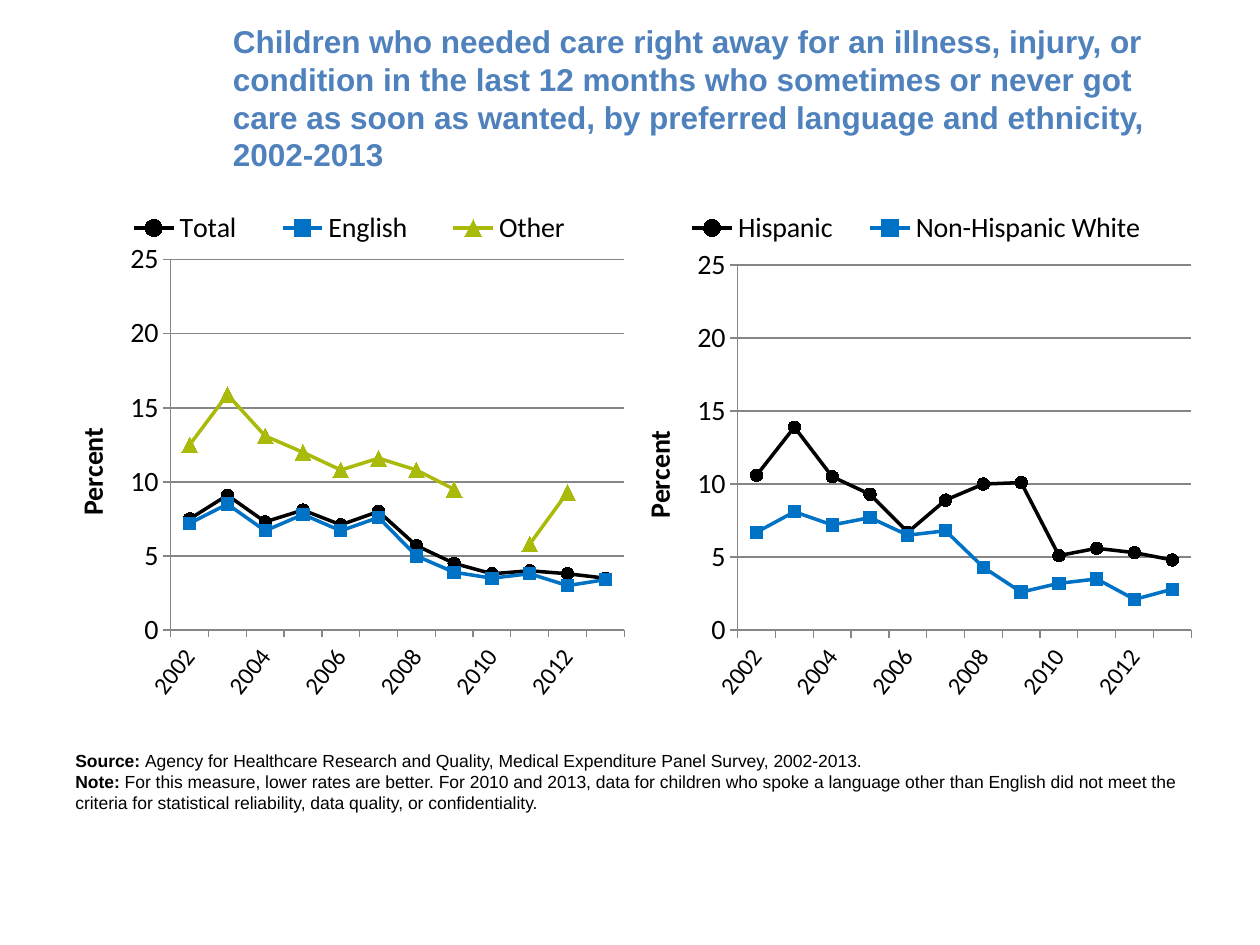
from pptx import Presentation
from pptx.chart.data import CategoryChartData
from pptx.dml.color import RGBColor
from pptx.enum.chart import XL_CHART_TYPE, XL_LEGEND_POSITION, XL_MARKER_STYLE, XL_TICK_MARK
from pptx.enum.text import MSO_ANCHOR
from pptx.oxml import parse_xml
from pptx.oxml.ns import nsdecls, qn
from pptx.util import Pt

PX = 9144  # 100 px to the inch
LINE_MARKERS = XL_CHART_TYPE.LINE_MARKERS
TOP = XL_LEGEND_POSITION.TOP
OUTSIDE = XL_TICK_MARK.OUTSIDE
CIRCLE, SQUARE, TRIANGLE = (XL_MARKER_STYLE.CIRCLE, XL_MARKER_STYLE.SQUARE,
                            XL_MARKER_STYLE.TRIANGLE)
BLACK, GRAY = "000000", "868686"


def rgb(value):
    return RGBColor.from_string(value)


def make_layout(x, y, w, h, target=""):
    parts = "".join(f'<c:{tag} val="{val}"/>' for tag, val in
                    (("xMode", "edge"), ("yMode", "edge"),
                     ("x", x), ("y", y), ("w", w), ("h", h)))
    return parse_xml(f'<c:layout {nsdecls("c")}><c:manualLayout>{target}{parts}'
                     '</c:manualLayout></c:layout>')


prs = Presentation()
prs.slide_width, prs.slide_height = 1000 * PX, 750 * PX
s = prs.slides.add_slide(prs.slide_layouts[6])

# Title
sp = s.shapes.add_textbox(175 * PX, 30 * PX, 775 * PX, 95 * PX)
tf = sp.text_frame
tf.word_wrap = True
tf.vertical_anchor = MSO_ANCHOR.MIDDLE
tf.text = ("Children who needed care right away for an illness, injury, or condition "
           "in the last 12 months who sometimes or never got care as soon as wanted, "
           "by preferred language and ethnicity, 2002-2013")
font = tf.paragraphs[0].runs[0].font
font.name, font.size, font.bold = "Arial", Pt(18), True
font.color.rgb = rgb("4F81BD")

# Line charts: by language and by ethnicity
years = [str(year) for year in range(2002, 2014)]
styles = [(BLACK, CIRCLE, 7), ("0072C6", SQUARE, 7), ("AABA0A", TRIANGLE, 9)]
language = {
    "Total": [7.5, 9.1, 7.3, 8.1, 7.1, 8, 5.7, 4.5, 3.8, 4, 3.8, 3.5],
    "English": [7.2, 8.5, 6.7, 7.8, 6.7, 7.6, 5, 3.9, 3.5, 3.8, 3, 3.4],
    "Other": [12.5, 15.9, 13.1, 12, 10.8, 11.6, 10.8, 9.5, None, 5.8, 9.3, None],
}
ethnicity = {
    "Hispanic": [10.6, 13.9, 10.5, 9.3, 6.7, 8.9, 10, 10.1, 5.1, 5.6, 5.3, 4.8],
    "Non-Hispanic White": [6.7, 8.1, 7.2, 7.7, 6.5, 6.8, 4.3, 2.6, 3.2, 3.5, 2.1, 2.8],
}
for left, rates, plot_top in ((50, language, 0.11), (500, ethnicity, 0.12)):
    data = CategoryChartData(number_format="0.0")
    data.categories = years
    for name, values in rates.items():
        data.add_series(name, values)
    chart = s.shapes.add_chart(LINE_MARKERS, left * PX, 160 * PX,
                               450 * PX, 420 * PX, data).chart
    chart.has_title = False
    chart.font.name, chart.font.size = "Calibri", Pt(16)
    chart.font.color.rgb = rgb(BLACK)

    # Series
    chart.plots[0].vary_by_categories = False
    for series, (color, marker, size) in zip(chart.plots[0].series, styles):
        series.smooth = False
        series.format.line.width = Pt(2)
        series.format.line.color.rgb = rgb(color)
        series.marker.style, series.marker.size = marker, size
        series.marker.format.fill.solid()
        series.marker.format.fill.fore_color.rgb = rgb(color)
        series.marker.format.line.color.rgb = rgb(color)

    # Axes
    cat, val = chart.category_axis, chart.value_axis
    for axis, size in ((cat, 14), (val, 16)):
        axis.major_tick_mark = OUTSIDE
        axis.format.line.color.rgb = rgb(GRAY)
        axis.tick_labels.font.size = Pt(size)
        axis.tick_labels.font.name = "Calibri"
    val.minimum_scale, val.maximum_scale, val.major_unit = 0, 25, 5
    val.tick_labels.number_format = "0"
    val.tick_labels.number_format_is_linked = False
    val.major_gridlines.format.line.color.rgb = rgb(GRAY)
    tf = val.axis_title.text_frame
    tf.text = "Percent"
    font = tf.paragraphs[0].runs[0].font
    font.name, font.size, font.bold = "Calibri", Pt(16), True

    # Slanted labels on every second year
    cat_xml = cat._element
    cat_xml.find(qn("c:txPr")).find(qn("a:bodyPr")).set("rot", "-3120000")
    last = cat_xml.find(qn("c:noMultiLvlLbl"))
    for tag, step in (("tickLblSkip", 2), ("tickMarkSkip", 1)):
        last.addprevious(parse_xml(f'<c:{tag} {nsdecls("c")} val="{step}"/>'))

    # Legend and plot positions
    chart.has_legend = True
    legend = chart.legend
    legend.position = TOP
    legend.include_in_layout = False
    legend.font.name, legend.font.size = "Calibri", Pt(16)
    legend_xml = legend._element
    plot_xml = cat_xml.getparent()
    for parent in (legend_xml, plot_xml):
        for old in parent.findall(qn("c:layout")):
            parent.remove(old)
    legend_xml.find(qn("c:legendPos")).addnext(make_layout(0.06, 0.01, 0.89, 0.08))
    plot_xml.insert(0, make_layout(0.19, plot_top, 0.8, 0.81 - plot_top,
                                   '<c:layoutTarget val="inner"/>'))

# Source and note
sp = s.shapes.add_textbox(50 * PX, 590 * PX, 900 * PX, 61 * PX)
tf = sp.text_frame
tf.word_wrap = True
notes = [
    ("Source: ", "Agency for Healthcare Research and Quality, Medical Expenditure "
                 "Panel Survey, 2002-2013."),
    ("Note: ", "For this measure, lower rates are better. For 2010 and 2013, data for "
               "children who spoke a language other than English did not meet the "
               "criteria for statistical reliability, data quality, or confidentiality."),
]
for i, texts in enumerate(notes):
    p = tf.add_paragraph() if i else tf.paragraphs[0]
    for text, bold in zip(texts, (True, False)):
        r = p.add_run()
        r.text = text
        r.font.name, r.font.size, r.font.bold = "Arial", Pt(10), bold
        r.font.color.rgb = rgb(BLACK)

prs.save("out.pptx")
